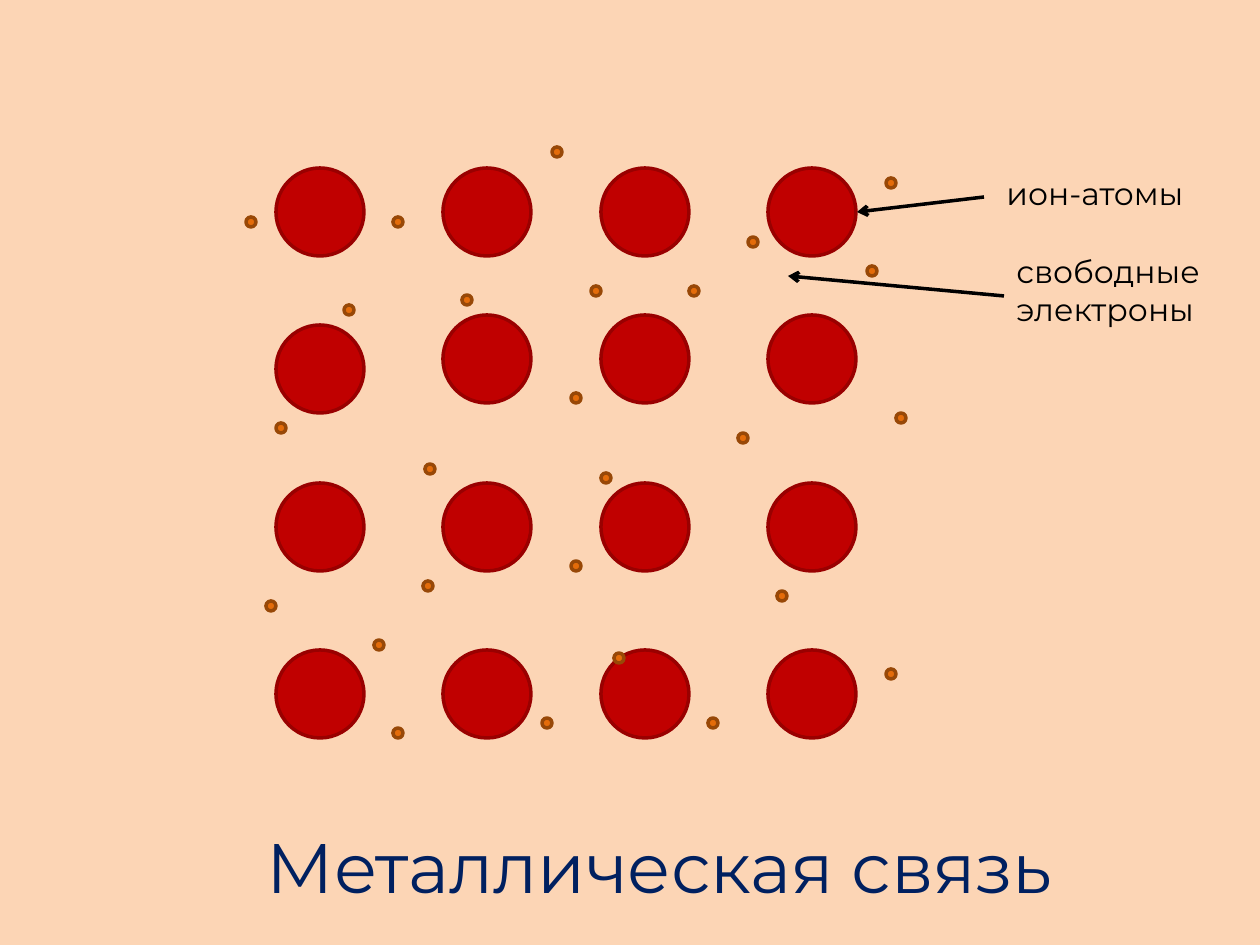
from itertools import product
from typing import NamedTuple

from lxml import etree
from pptx import Presentation
from pptx.dml.color import RGBColor
from pptx.enum.shapes import MSO_CONNECTOR, MSO_SHAPE
from pptx.enum.text import MSO_AUTO_SIZE, PP_ALIGN
from pptx.oxml.ns import qn
from pptx.slide import Slide
from pptx.util import Emu, Pt

OVAL = MSO_SHAPE.OVAL
STRAIGHT = MSO_CONNECTOR.STRAIGHT
LEFT, CENTER = PP_ALIGN.LEFT, PP_ALIGN.CENTER
FIT_SHAPE = MSO_AUTO_SIZE.SHAPE_TO_FIT_TEXT

PEACH = RGBColor(0xFC, 0xD5, 0xB5)
RED = RGBColor(0xC0, 0x00, 0x00)
DARK_RED = RGBColor(0x99, 0x00, 0x00)
ORANGE = RGBColor(0xE4, 0x6C, 0x0A)
BROWN = RGBColor(0x98, 0x48, 0x07)
BLACK = RGBColor(0x00, 0x00, 0x00)
NAVY = RGBColor(0x00, 0x20, 0x60)

FONT = "Montserrat"
PX_PER_INCH = 126
LINE_WIDTH = Pt(2)


class Point(NamedTuple):
    x: int
    y: int


class Particle(NamedTuple):
    diameter: int
    fill: RGBColor
    outline: RGBColor


class Box(NamedTuple):
    left: int
    top: int
    width: int
    height: int


ION = Particle(88, RED, DARK_RED)
ELECTRON = Particle(10, ORANGE, BROWN)

ION_COLUMNS = (320, 487, 645, 812)
ION_ROWS = (212, 359, 527, 694)
# One ion of the lattice sits slightly below its row.
SHIFTED_IONS = {Point(320, 359): Point(320, 369)}

ELECTRONS = [Point(*center) for center in (
    (557, 152), (891, 183), (251, 222), (398, 222), (753, 242), (872, 271),
    (596, 291), (694, 291), (467, 300), (349, 310), (576, 398), (901, 418),
    (281, 428), (743, 438), (430, 469), (606, 478), (576, 566), (428, 586),
    (782, 596), (271, 606), (379, 645), (619, 658), (891, 674), (547, 723),
    (713, 723), (398, 733),
)]

ARROWS = (
    (Point(984, 197), Point(857, 212)),
    (Point(1004, 296), Point(788, 276)),
)


def px(length: int) -> Emu:
    return Emu(round(length * 914400 / PX_PER_INCH))


def draw_particle(page: Slide, center: Point, particle: Particle) -> None:
    size = px(particle.diameter)
    circle = page.shapes.add_shape(
        OVAL, px(center.x) - size // 2, px(center.y) - size // 2, size, size)
    circle.shadow.inherit = False
    circle.fill.solid()
    circle.fill.fore_color.rgb = particle.fill
    circle.line.color.rgb = particle.outline
    circle.line.width = LINE_WIDTH


def draw_arrow(page: Slide, start: Point, end: Point) -> None:
    arrow = page.shapes.add_connector(STRAIGHT, *map(px, (*start, *end)))
    arrow.line.color.rgb = BLACK
    arrow.line.width = LINE_WIDTH
    etree.SubElement(arrow.line._get_or_add_ln(), qn("a:tailEnd"), type="arrow")
    etree.SubElement(arrow._element.spPr, qn("a:effectLst"))


def draw_text(page: Slide, text: str, box: Box, *, size: int = 18,
              color: RGBColor = BLACK, align: PP_ALIGN = LEFT) -> None:
    frame = page.shapes.add_textbox(*map(px, box)).text_frame
    frame.word_wrap = True
    frame.auto_size = FIT_SHAPE
    para = frame.paragraphs[0]
    para.alignment = align
    span = para.add_run()
    span.text = text
    span.font.name = FONT
    span.font.size = Pt(size)
    span.font.color.rgb = color


def main() -> None:
    deck = Presentation()
    deck.slide_width, deck.slide_height = px(1260), px(945)
    page = deck.slides.add_slide(deck.slide_layouts[6])
    page.background.fill.solid()
    page.background.fill.fore_color.rgb = PEACH

    for y, x in product(ION_ROWS, ION_COLUMNS):
        center = Point(x, y)
        draw_particle(page, SHIFTED_IONS.get(center, center), ION)
    for center in ELECTRONS:
        draw_particle(page, center, ELECTRON)

    draw_text(page, "ион-атомы", Box(994, 168, 227, 51))
    for start, end in ARROWS:
        draw_arrow(page, start, end)
    draw_text(page, "свободные электроны", Box(1004, 246, 227, 89))
    draw_text(page, "Металлическая связь", Box(138, 817, 1043, 97),
              size=40, color=NAVY, align=CENTER)

    deck.save("out.pptx")


if __name__ == "__main__":
    main()
